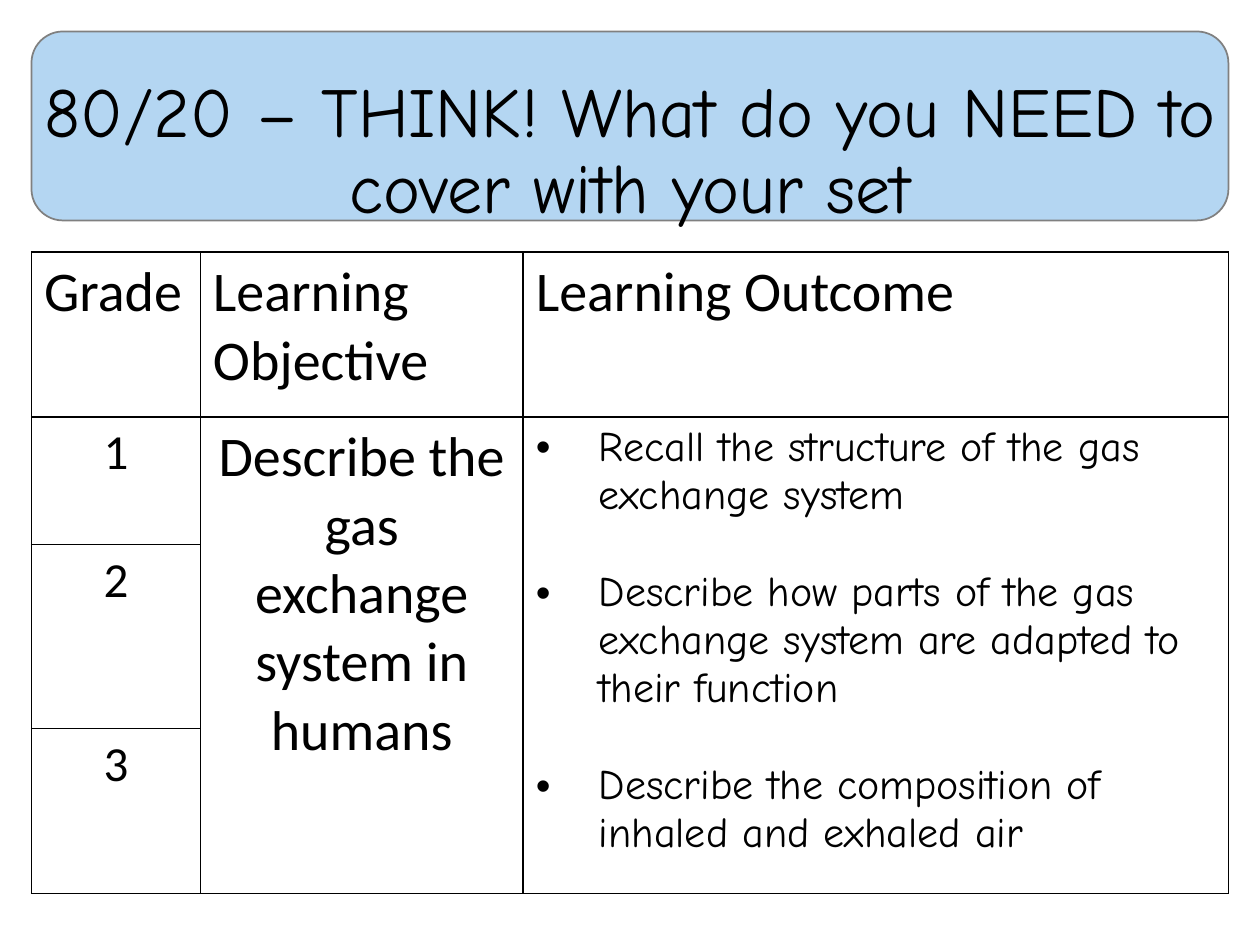
from lxml import etree
from pptx import Presentation
from pptx.dml.color import RGBColor
from pptx.enum.shapes import MSO_SHAPE
from pptx.enum.text import MSO_ANCHOR, MSO_AUTO_SIZE, PP_ALIGN
from pptx.oxml.ns import qn
from pptx.util import Pt

LEFT, CENTER = PP_ALIGN.LEFT, PP_ALIGN.CENTER
COLORS = {"banner": "B4D6F2", "outline": "808080", "text": "000000",
          "border": "000000", "cell": "FFFFFF"}
BODY_FONT, HAND_FONT = "Calibri", "Comic Neue"
MARGIN, WIDTH = 18, 684


def format_paragraph(p, size, font, align):
    p.alignment = align
    for r in p.runs:
        r.font.size = Pt(size)
        r.font.name = font
        r.font.color.rgb = RGBColor.from_string(COLORS["text"])


def style_cell(cell):
    """Give the cell thin borders on all sides and a plain fill."""
    tc_pr = cell._tc.get_or_add_tcPr()
    for side in ("a:lnL", "a:lnR", "a:lnT", "a:lnB"):
        ln = etree.SubElement(tc_pr, qn(side), w=str(Pt(1)))
        fill = etree.SubElement(ln, qn("a:solidFill"))
        etree.SubElement(fill, qn("a:srgbClr"), val=COLORS["border"])
    cell.fill.solid()
    cell.fill.fore_color.rgb = RGBColor.from_string(COLORS["cell"])


prs = Presentation()
prs.slide_width, prs.slide_height = Pt(720), Pt(540)
s = prs.slides.add_slide(prs.slide_layouts[0])
subtitle = s.placeholders[1]._element
subtitle.getparent().remove(subtitle)

# Banner, placed behind the title
banner = s.shapes.add_shape(MSO_SHAPE.ROUNDED_RECTANGLE,
                            Pt(MARGIN), Pt(18), Pt(WIDTH), Pt(108))
banner.shadow.inherit = False
banner.fill.solid()
banner.fill.fore_color.rgb = RGBColor.from_string(COLORS["banner"])
banner.line.color.rgb = RGBColor.from_string(COLORS["outline"])
banner.line.width = Pt(1)
s.shapes.title._element.addprevious(banner._element)

title = s.shapes.title
title.left, title.top, title.width, title.height = Pt(MARGIN), Pt(18), Pt(WIDTH), Pt(116)
tf = title.text_frame
tf.text = "80/20 – THINK! What do you NEED to cover with your set"
tf.word_wrap = True
tf.auto_size = MSO_AUTO_SIZE.NONE
tf.vertical_anchor = MSO_ANCHOR.BOTTOM
tf.paragraphs[0].line_spacing = 0.9
format_paragraph(tf.paragraphs[0], 40, HAND_FONT, CENTER)

# Table of grades, objective and outcomes
col_widths = [96.5, 184.5, 403]
row_heights = [94.3, 73, 105, 94.3]
table = s.shapes.add_table(len(row_heights), len(col_widths), Pt(MARGIN), Pt(144),
                           Pt(WIDTH), Pt(sum(row_heights))).table
table.first_row = table.horz_banding = False
for column, width in zip(table.columns, col_widths):
    column.width = Pt(width)
for row, height in zip(table.rows, row_heights):
    row.height = Pt(height)
for cell in table.iter_cells():
    style_cell(cell)
for col in (1, 2):
    table.cell(1, col).merge(table.cell(3, col))

entries = [
    (0, 0, "Grade", 32, LEFT),
    (0, 1, "Learning Objective", 32, LEFT),
    (0, 2, "Learning Outcome", 32, LEFT),
    (1, 0, "1", 28, CENTER),
    (2, 0, "2", 28, CENTER),
    (3, 0, "3", 28, CENTER),
    (1, 1, "Describe the gas exchange system in humans", 32, CENTER),
]
for row, col, text, size, align in entries:
    tf = table.cell(row, col).text_frame
    tf.text = text
    format_paragraph(tf.paragraphs[0], size, BODY_FONT, align)

outcomes = [
    "Recall the structure of the gas exchange system",
    "Describe how parts of the gas exchange system are adapted to their function",
    "Describe the composition of inhaled and exhaled air",
]
tf = table.cell(1, 2).text_frame
tf.text = "\n".join(outcomes)
for p in tf.paragraphs:
    format_paragraph(p, 24, HAND_FONT, LEFT)
    if p.text != outcomes[-1]:
        p.space_after = Pt(27.7)
    p_pr = p._p.get_or_add_pPr()
    p_pr.set("marL", str(Pt(36)))
    p_pr.set("indent", str(-Pt(36)))
    etree.SubElement(p_pr, qn("a:buFont"), typeface="Arial")
    etree.SubElement(p_pr, qn("a:buChar"), char="•")

prs.save("out.pptx")
